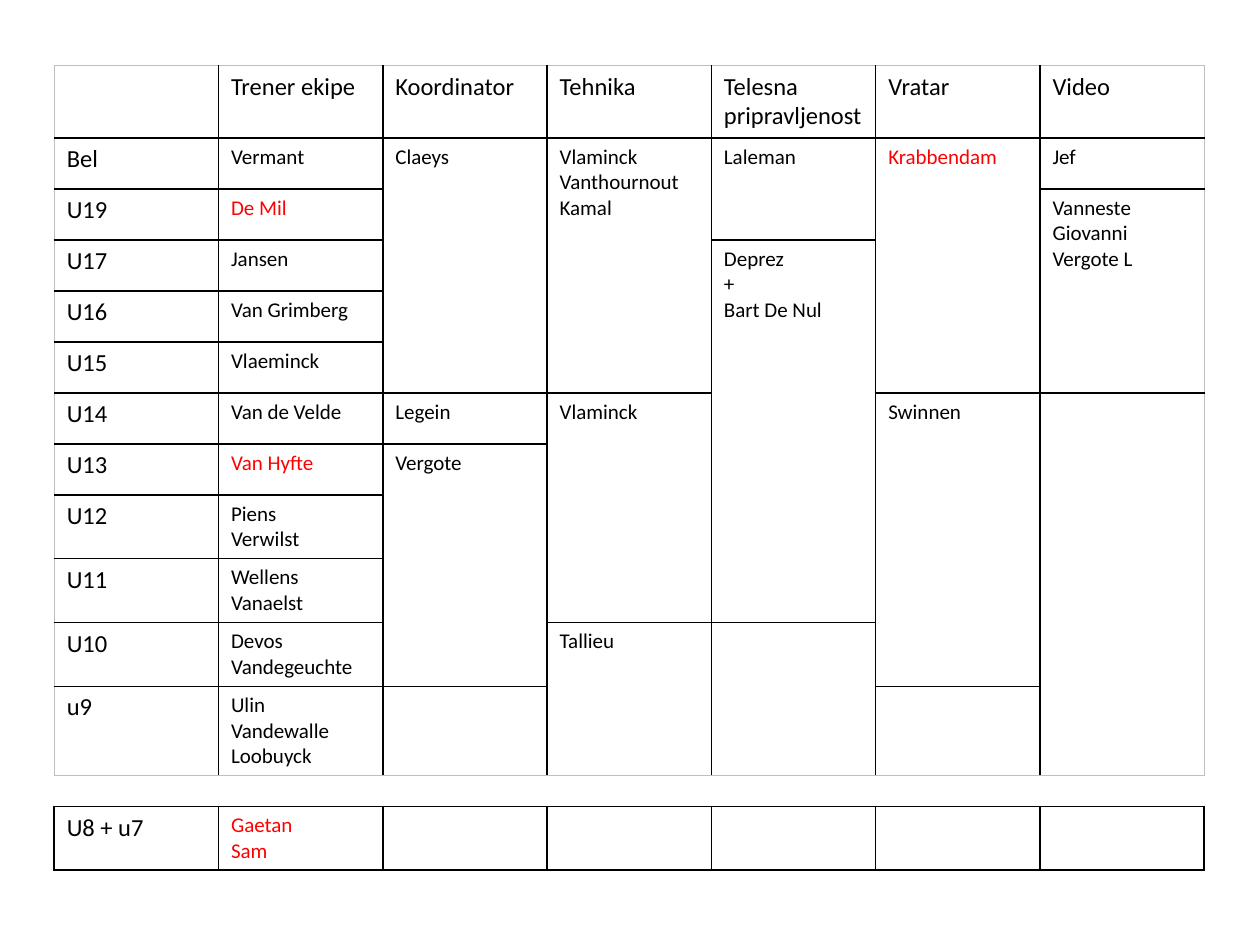
from dataclasses import dataclass

from lxml import etree
from pptx import Presentation
from pptx import util as u
from pptx.dml.color import RGBColor
from pptx.oxml import ns


@dataclass(frozen=True)
class Theme:
    font: str = "Calibri"
    label_size: int = 14
    name_size: int = 12
    text: str = "000000"
    vacancy: str = "FF0000"
    paper: str = "FFFFFF"
    rule: str = "000000"
    frame: str = "BFBFBF"
    rule_width: float = 1
    frame_width: float = 0.5


THEME = Theme()
HIGHLIGHTED = {"De Mil", "Van Hyfte", "Krabbendam", "Gaetan\nSam"}
HEADINGS = ["", "Trener ekipe", "Koordinator", "Tehnika",
            "Telesna pripravljenost", "Vratar", "Video"]
TEAMS = ["Bel", "U19", "U17", "U16", "U15", "U14", "U13", "U12", "U11", "U10", "u9"]
COACHES = ["Vermant", "De Mil", "Jansen", "Van Grimberg", "Vlaeminck",
           "Van de Velde", "Van Hyfte", "Piens\nVerwilst", "Wellens\nVanaelst",
           "Devos\nVandegeuchte", "Ulin\nVandewalle\nLoobuyck"]
# Each staff column, from top to bottom: (number of teams served, names)
STAFF = [
    [(5, "Claeys"), (1, "Legein"), (4, "Vergote"), (1, "")],
    [(5, "Vlaminck\nVanthournout\nKamal"), (4, "Vlaminck"), (2, "Tallieu")],
    [(2, "Laleman"), (7, "Deprez\n+\nBart De Nul"), (2, "")],
    [(5, "Krabbendam"), (5, "Swinnen"), (1, "")],
    [(1, "Jef"), (4, "Vanneste Giovanni\nVergote L"), (6, "")],
]


def add_edge(cell, side, color, width):
    line = etree.SubElement(cell._tc.get_or_add_tcPr(), ns.qn(f"a:ln{side}"),
                            w=str(u.Pt(width)))
    fill = etree.SubElement(line, ns.qn("a:solidFill"))
    etree.SubElement(fill, ns.qn("a:srgbClr"), val=color)


def write(cell, content, size):
    if not content:
        return
    color = THEME.vacancy if content in HIGHLIGHTED else THEME.text
    frame = cell.text_frame
    for index, name in enumerate(content.split("\n")):
        paragraph = frame.add_paragraph() if index else frame.paragraphs[0]
        run = paragraph.add_run()
        run.text = name
        run.font.name = THEME.font
        run.font.size = u.Pt(size)
        run.font.color.rgb = RGBColor.from_string(color)


def add_grid(slide, box, rows):
    table = slide.shapes.add_table(rows, len(HEADINGS),
                                   *(u.Inches(length) for length in box)).table
    table.first_row = table.horz_banding = False
    return table


def rule_cells(table, frame_color, frame_width):
    """Rule every cell, with its own line style on the table's outer edge."""
    rows, columns = len(table.rows), len(table.columns)
    for row in range(rows):
        for column in range(columns):
            cell = table.cell(row, column)
            bottom = row + (cell.span_height if cell.is_merge_origin else 1)
            outer = {"L": column == 0, "R": column == columns - 1,
                     "T": row == 0, "B": bottom == rows}
            for side, on_frame in outer.items():
                if on_frame:
                    add_edge(cell, side, frame_color, frame_width)
                else:
                    add_edge(cell, side, THEME.rule, THEME.rule_width)
            cell.fill.solid()
            cell.fill.fore_color.rgb = RGBColor.from_string(THEME.paper)


def add_staff_table(slide, box):
    table = add_grid(slide, box, len(TEAMS) + 1)
    for column, heading in enumerate(HEADINGS):
        write(table.cell(0, column), heading, THEME.label_size)
    for row, (team, coach) in enumerate(zip(TEAMS, COACHES), start=1):
        write(table.cell(row, 0), team, THEME.label_size)
        write(table.cell(row, 1), coach, THEME.name_size)
    for column, posts in enumerate(STAFF, start=2):
        row = 1
        for teams_served, names in posts:
            cell = table.cell(row, column)
            if teams_served > 1:
                cell.merge(table.cell(row + teams_served - 1, column))
            write(cell, names, THEME.name_size)
            row += teams_served
    rule_cells(table, THEME.frame, THEME.frame_width)


def add_youngest_table(slide, box):
    table = add_grid(slide, box, 1)
    write(table.cell(0, 0), "U8 + u7", THEME.label_size)
    write(table.cell(0, 1), "Gaetan\nSam", THEME.name_size)
    rule_cells(table, THEME.rule, THEME.rule_width)


def main():
    deck = Presentation()
    deck.slide_width, deck.slide_height = u.Inches(10), u.Inches(7.5)
    slide = deck.slides.add_slide(deck.slide_layouts[6])
    left, width = 0.43, 9.13
    add_staff_table(slide, (left, 0.52, width, 4.86))
    add_youngest_table(slide, (left, 6.4, width, 0.5))
    deck.save("out.pptx")


if __name__ == "__main__":
    main()
